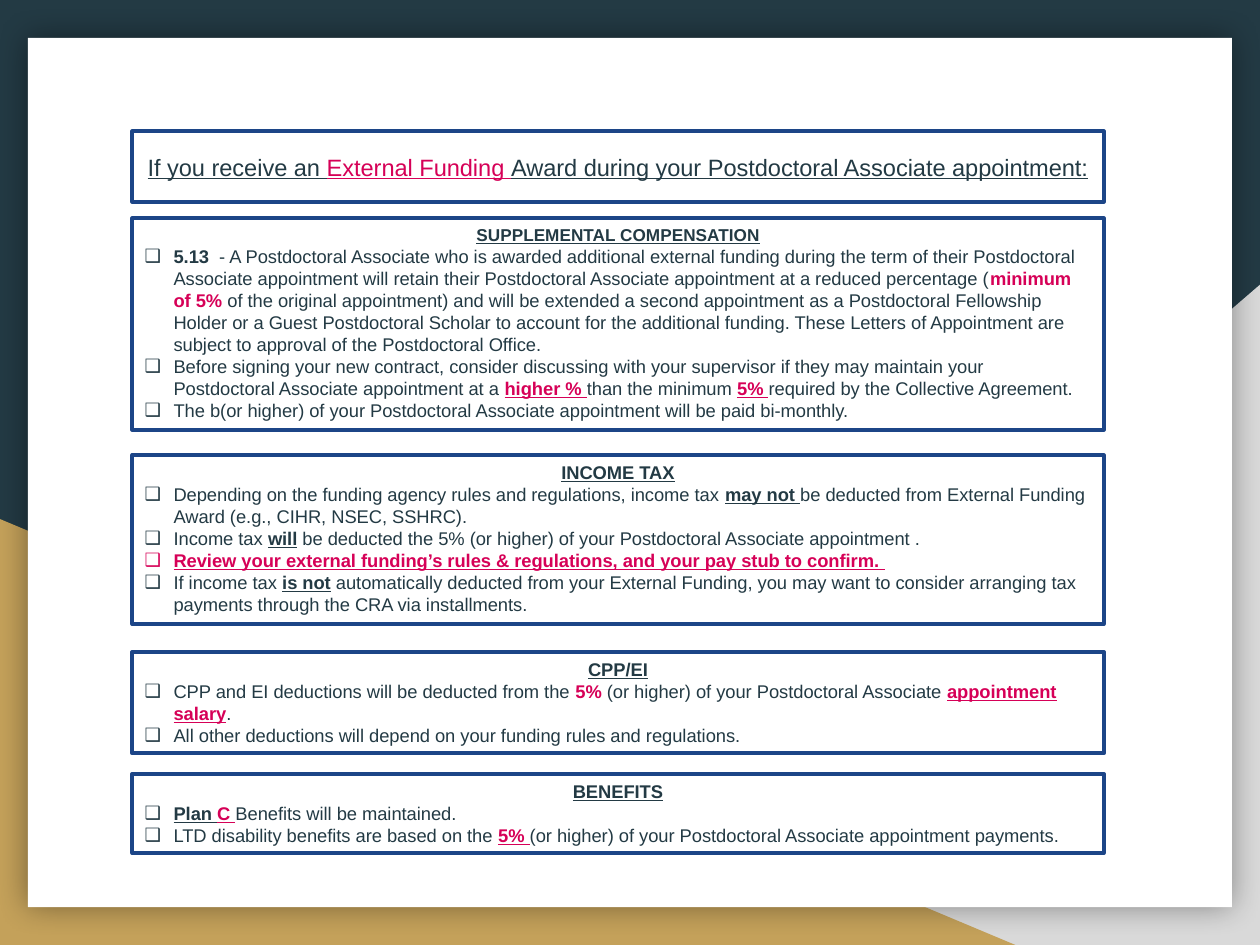
from lxml.etree import SubElement
from pptx import Presentation
from pptx.dml.color import RGBColor
from pptx.enum.shapes import MSO_SHAPE
from pptx.enum.text import MSO_ANCHOR, MSO_AUTO_SIZE, PP_ALIGN
from pptx.oxml.ns import qn
from pptx.util import Pt

SLATE = RGBColor(0x23, 0x3A, 0x44)
GREY = RGBColor(0xD9, 0xD9, 0xD9)
GOLD = RGBColor(0xC4, 0xA1, 0x5A)
WHITE = RGBColor(0xFF, 0xFF, 0xFF)
BLUE = RGBColor(0x1C, 0x45, 0x87)
PINK = RGBColor(0xD6, 0x00, 0x57)

BOX_LEFT, BOX_WIDTH = 75.6, 555.1
INDENT = 16.5

deck = Presentation()
deck.slide_width, deck.slide_height = Pt(720), Pt(540)
page = deck.slides.add_slide(deck.slide_layouts[6])
page.background.fill.solid()
page.background.fill.fore_color.rgb = SLATE


def add_block(kind, left, top, width, height, fill=None):
    shape = page.shapes.add_shape(kind, Pt(left), Pt(top), Pt(width), Pt(height))
    shape.shadow.inherit = False
    if fill is None:
        shape.fill.background()
        shape.line.color.rgb = BLUE
        shape.line.width = Pt(2.25)
    else:
        shape.fill.solid()
        shape.fill.fore_color.rgb = fill
        shape.line.fill.background()
    return shape


def write_spans(para, spans, size):
    para.font.size = Pt(size)
    para.font.name = "Arial"
    for text, style in spans:
        span = para.add_run()
        span.text = text
        span.font.bold = "b" in style
        span.font.underline = "u" in style
        span.font.color.rgb = PINK if "p" in style else SLATE


grey_corner = add_block(MSO_SHAPE.RIGHT_TRIANGLE, 282.2, 162.7, 437.8, 377.3, GREY)
grey_corner._element.spPr.find(qn("a:xfrm")).set("flipH", "1")
add_block(MSO_SHAPE.RIGHT_TRIANGLE, 0, 296.6, 580.3, 243.4, GOLD)
panel = add_block(MSO_SHAPE.RECTANGLE, 16, 21.6, 688, 496.8, WHITE)
effects = panel._element.spPr.find(qn("a:effectLst"))
shadow = SubElement(effects, qn("a:outerShdw"), blurRad=str(Pt(18)), dist="0", dir="0",
                    algn="ctr", rotWithShape="0")
shade = SubElement(shadow, qn("a:srgbClr"), val="000000")
SubElement(shade, qn("a:alpha"), val="40000")

title = add_block(MSO_SHAPE.RECTANGLE, BOX_LEFT, 75.1, BOX_WIDTH, 40.3)
title.text_frame.word_wrap = True
title.text_frame.vertical_anchor = MSO_ANCHOR.MIDDLE
title.text_frame.auto_size = MSO_AUTO_SIZE.SHAPE_TO_FIT_TEXT
title_para = title.text_frame.paragraphs[0]
title_para.alignment = PP_ALIGN.CENTER
write_spans(title_para, [
    ("If you receive an ", "u"),
    ("External Funding ", "up"),
    ("Award during your Postdoctoral Associate appointment:", "u"),
], 13.5)

sections = [
    ("SUPPLEMENTAL COMPENSATION", 9.8, 124.7, 120.9, [
        [("5.13", "b"),
         ("  - A Postdoctoral Associate who is awarded additional external funding during the "
          "term of their Postdoctoral Associate appointment will retain their Postdoctoral "
          "Associate appointment at a reduced percentage (", ""),
         ("minimum of 5% ", "bp"),
         ("of the original appointment) and will be extended a second appointment as a "
          "Postdoctoral Fellowship Holder or a Guest Postdoctoral Scholar to account for the "
          "additional funding. These Letters of Appointment are subject to approval of the "
          "Postdoctoral Office.", "")],
        [("Before signing your new contract, consider discussing with your supervisor if they "
          "may maintain your Postdoctoral Associate appointment at a ", ""),
         ("higher % ", "bup"),
         ("than the minimum ", ""),
         ("5% ", "bup"),
         ("required by the Collective Agreement.", "")],
        [("The b(or higher) of your Postdoctoral Associate appointment will be paid "
          "bi-monthly.", "")],
    ]),
    ("INCOME TAX", 10.5, 260.1, 96.5, [
        [("Depending on the funding agency rules and regulations, income tax ", ""),
         ("may not ", "bu"),
         ("be deducted from External Funding Award (e.g., CIHR, NSEC, SSHRC).", "")],
        [("Income tax ", ""),
         ("will", "bu"),
         (" be deducted the 5% (or higher) of your Postdoctoral Associate appointment .", "")],
        [("Review your external funding’s rules & regulations, and your pay stub to "
          "confirm. ", "bup")],
        [("If income tax ", ""),
         ("is not", "bu"),
         (" automatically deducted from your External Funding, you may want to consider "
          "arranging tax payments through the CRA via installments.", "")],
    ]),
    ("CPP/EI", 10.5, 372.5, 58, [
        [("CPP and EI deductions will be deducted from the ", ""),
         ("5%", "bp"),
         (" (or higher) of your Postdoctoral Associate ", ""),
         ("appointment salary", "bup"),
         (".", "")],
        [("All other deductions will depend on your funding rules and regulations.", "")],
    ]),
    ("BENEFITS", 10.5, 442.2, 45.3, [
        [("Plan ", "bu"), ("C ", "bup"), ("Benefits will be maintained.", "")],
        [("LTD disability benefits are based on the ", ""),
         ("5% ", "bup"),
         ("(or higher) of your Postdoctoral Associate appointment payments.", "")],
    ]),
]

for heading, heading_size, top, height, items in sections:
    box = add_block(MSO_SHAPE.RECTANGLE, BOX_LEFT, top, BOX_WIDTH, height)
    frame = box.text_frame
    frame.word_wrap = True
    frame.vertical_anchor = MSO_ANCHOR.TOP
    frame.auto_size = MSO_AUTO_SIZE.SHAPE_TO_FIT_TEXT
    heading_para = frame.paragraphs[0]
    heading_para.alignment = PP_ALIGN.CENTER
    write_spans(heading_para, [(heading, "bu")], heading_size)
    for spans in items:
        para = frame.add_paragraph()
        para.alignment = PP_ALIGN.LEFT
        write_spans(para, spans, 10.5)
        properties = para._p.get_or_add_pPr()
        properties.set("marL", str(Pt(INDENT)))
        properties.set("indent", str(-Pt(INDENT)))
        bullet_color = PINK if "p" in spans[0][1] else SLATE
        color = SubElement(properties, qn("a:buClr"))
        SubElement(color, qn("a:srgbClr"), val=str(bullet_color))
        SubElement(properties, qn("a:buFont"), typeface="Arial")
        SubElement(properties, qn("a:buChar"), char="❑")
        defaults = properties.find(qn("a:defRPr"))
        properties.append(defaults)

deck.save("out.pptx")
